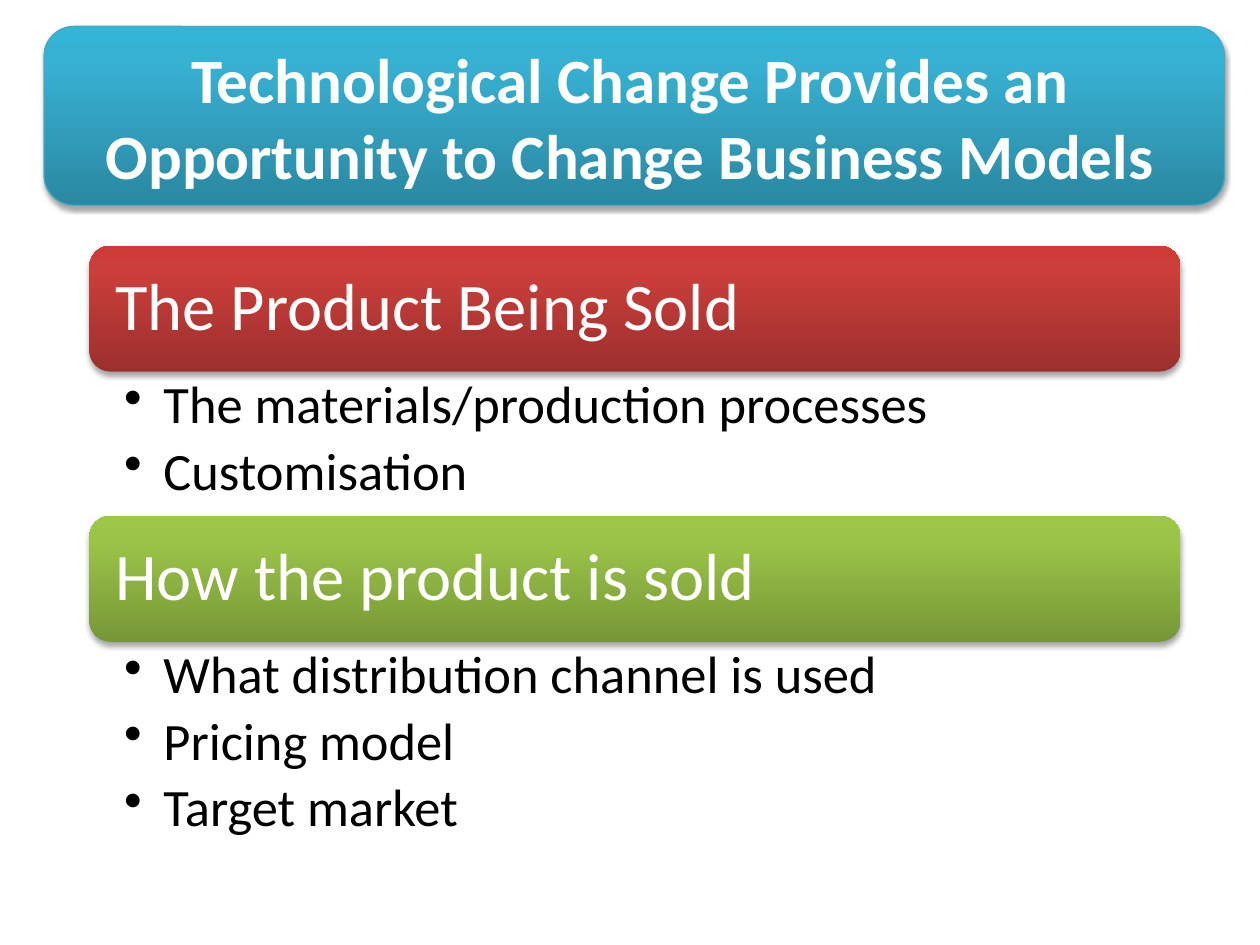
from lxml.etree import SubElement
from pptx import Presentation
from pptx.dml.color import RGBColor
from pptx.enum.dml import MSO_FILL
from pptx.enum.shapes import MSO_SHAPE
from pptx.enum.text import MSO_ANCHOR, MSO_AUTO_SIZE, PP_ALIGN
from pptx.oxml import parse_xml
from pptx.oxml.ns import nsdecls, qn
from pptx.util import Pt

# Content
TITLE = "Technological Change Provides an Opportunity to Change Business Models"
WHITE = RGBColor(0xFF, 0xFF, 0xFF)
BLACK = RGBColor(0x00, 0x00, 0x00)
TITLE_LINE = RGBColor(0x46, 0xAA, 0xC5)
# Gradients run from the bottom edge to the top edge
BLUE = (RGBColor(0x2A, 0x88, 0xA2), RGBColor(0x37, 0xB1, 0xD2), RGBColor(0x34, 0xB4, 0xD6))
RED = (RGBColor(0x9C, 0x2F, 0x2D), RGBColor(0xCB, 0x3E, 0x3A), RGBColor(0xCE, 0x3B, 0x37))
GREEN = (RGBColor(0x77, 0x97, 0x37), RGBColor(0x9B, 0xC3, 0x48), RGBColor(0x9D, 0xC7, 0x46))
STOPS = (0, 80, 100)
SECTIONS = [
    ("The Product Being Sold", RED, ["The materials/production processes", "Customisation"]),
    ("How the product is sold", GREEN,
     ["What distribution channel is used", "Pricing model", "Target market"]),
]

# Layout, in points
FONT = "Calibri"
LEFT, TOP, WIDTH = 51.1, 140.4, 623.5
HEADER_HEIGHT = 72
ITEM_HEIGHT = 41.2
HEADER_INSET = 11.4
INDENT = 22.5


def set_font(paragraph, size, color, bold=False):
    font = paragraph.font
    font.name, font.size, font.bold = FONT, Pt(size), bold
    font.color.rgb = color


def set_insets(frame, left, top, right, bottom):
    frame.margin_left, frame.margin_top = Pt(left), Pt(top)
    frame.margin_right, frame.margin_bottom = Pt(right), Pt(bottom)


def add_panel(page, left, top, width, height, colors):
    """Rounded panel with a vertical gradient and a soft shadow below."""
    panel = page.shapes.add_shape(
        MSO_SHAPE.ROUNDED_RECTANGLE, Pt(left), Pt(top), Pt(width), Pt(height))
    panel.line.fill.background()
    stops = "".join(
        f'<a:gs pos="{stop * 1000}"><a:srgbClr val="{color}"/></a:gs>'
        for stop, color in zip(STOPS, colors))
    properties = panel._element.spPr
    properties.find(qn("a:prstGeom")).addnext(parse_xml(
        f'<a:gradFill {nsdecls("a")} rotWithShape="1"><a:gsLst>{stops}</a:gsLst>'
        '<a:lin ang="16200000" scaled="0"/></a:gradFill>'))
    properties.append(parse_xml(
        f'<a:effectLst {nsdecls("a")}><a:outerShdw blurRad="{Pt(3.1)}" dist="{Pt(1.8)}" '
        'dir="5400000" rotWithShape="0"><a:srgbClr val="000000"><a:alpha val="35000"/>'
        '</a:srgbClr></a:outerShdw></a:effectLst>'))
    return panel


def add_header(page, top, text, colors):
    frame = add_panel(page, LEFT, top, WIDTH, HEADER_HEIGHT, colors).text_frame
    frame.vertical_anchor = MSO_ANCHOR.MIDDLE
    set_insets(frame, *[HEADER_INSET] * 4)
    para = frame.paragraphs[0]
    para.text, para.alignment, para.line_spacing = text, PP_ALIGN.LEFT, 0.9
    set_font(para, 38, WHITE)


def add_bullets(page, top, items):
    box = page.shapes.add_textbox(Pt(LEFT), Pt(top), Pt(WIDTH), Pt(ITEM_HEIGHT * len(items)))
    frame = box.text_frame
    frame.word_wrap = True
    set_insets(frame, 19.8, 3.8, 21.3, 3.8)
    for index, item in enumerate(items):
        para = frame.paragraphs[0] if index == 0 else frame.add_paragraph()
        para.text, para.level = item, 1
        para.line_spacing, para.space_after = 0.9, Pt(5.6)
        set_font(para, 30, BLACK)
        properties = para._p.get_or_add_pPr()
        properties.set("marL", str(Pt(INDENT)))
        properties.set("indent", str(Pt(-INDENT)))
        bullet = SubElement(properties, qn("a:buChar"))
        bullet.set("char", "•")
        properties.remove(bullet)
        properties.find(qn("a:spcAft")).addnext(bullet)


def add_title(page):
    title = page.shapes.title
    title.left, title.top, title.width, title.height = Pt(36), Pt(21.6), Pt(648), Pt(90)
    frame = title.text_frame
    frame.word_wrap = True
    frame.auto_size = MSO_AUTO_SIZE.NONE
    frame.vertical_anchor = MSO_ANCHOR.MIDDLE
    para = frame.paragraphs[0]
    para.text, para.alignment = TITLE, PP_ALIGN.CENTER
    set_font(para, 36, WHITE, bold=True)

    # The panel sits behind the title
    panel = add_panel(page, 25.2, 15.1, 674.6, 102.2, BLUE)
    panel.line.color.rgb = TITLE_LINE
    panel.line.width = Pt(0.75)
    title._element.addprevious(panel._element)


def main():
    deck = Presentation()
    deck.slide_width, deck.slide_height = Pt(720), Pt(540)
    page = deck.slides.add_slide(deck.slide_layouts[5])
    add_title(page)

    # Each section: a header panel with its bullets directly below
    top = TOP
    for heading, colors, items in SECTIONS:
        add_header(page, top, heading, colors)
        add_bullets(page, top + HEADER_HEIGHT, items)
        top += HEADER_HEIGHT + ITEM_HEIGHT * len(items)
    deck.save("out.pptx")


if __name__ == "__main__":
    main()
